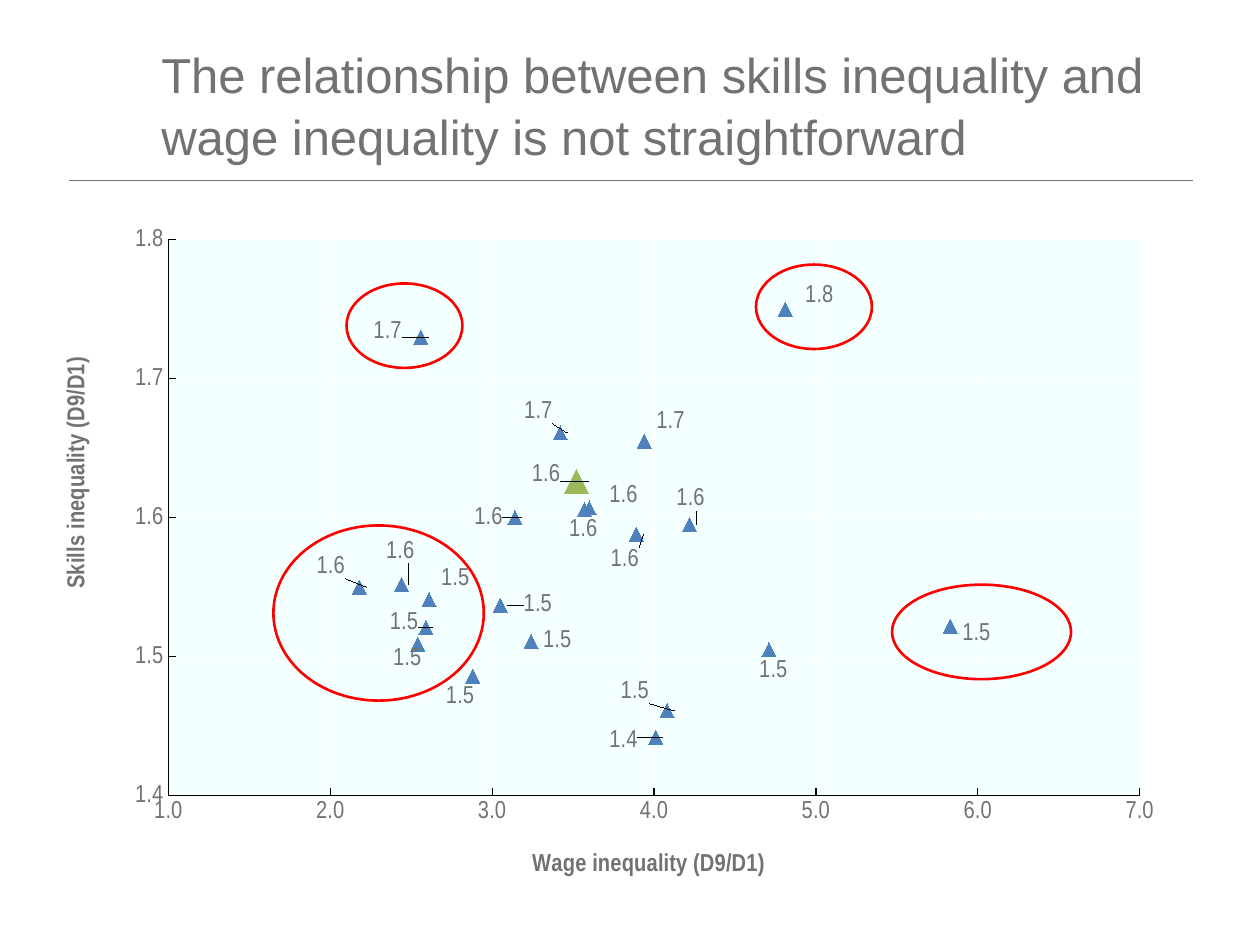
from dataclasses import dataclass

from lxml.etree import SubElement
from pptx import Presentation
from pptx.chart.data import XyChartData
from pptx.dml.color import RGBColor as Rgb
from pptx.enum.chart import XL_CHART_TYPE as ChartType
from pptx.enum.chart import XL_LABEL_POSITION as LabelPosition
from pptx.enum.chart import XL_MARKER_STYLE as MarkerStyle
from pptx.enum.chart import XL_TICK_MARK as TickMark
from pptx.enum.dml import MSO_THEME_COLOR as ThemeColor
from pptx.enum.shapes import MSO_CONNECTOR as Connector
from pptx.enum.shapes import MSO_SHAPE as Shape
from pptx.enum.text import MSO_ANCHOR as Anchor
from pptx.enum.text import MSO_AUTO_SIZE as AutoSize
from pptx.enum.text import PP_ALIGN as Align
from pptx.oxml import parse_xml
from pptx.oxml.ns import nsdecls, qn
from pptx.util import Inches, Pt


@dataclass(frozen=True)
class Theme:
    """Colours, fonts and type sizes of the slide."""
    text: Rgb = Rgb(0x72, 0x72, 0x72)
    axis: Rgb = Rgb(0, 0, 0)
    grid: Rgb = Rgb(0xFF, 0xFF, 0xFF)
    plot: str = "F4FFFF"
    country: Rgb = Rgb(0x4F, 0x81, 0xBD)
    highlight: Rgb = Rgb(0x9B, 0xBB, 0x59)
    ring: Rgb = Rgb(0xFF, 0, 0)
    title_font: str = "Arial"
    chart_font: str = "Arial Narrow"
    title_size: Pt = Pt(28)
    chart_size: Pt = Pt(14)


THEME = Theme()
TITLE = "The relationship between skills inequality and wage inequality is not straightforward"
CHART_BOX = (0.42, 1.67, 9.08, 5.42)
NUMBER_FORMAT = "#,##0.0"
HIGHLIGHTED = 5

# Wage inequality, skills inequality, label shift right and down in inches
COUNTRIES = [
    (3.14, 1.600, -0.42, 0), (3.05, 1.537, 0.09, 0),
    (3.94, 1.655, 0, -0.15), (2.88, 1.486, -0.31, 0.17),
    (2.59, 1.521, -0.38, -0.04), (3.52, 1.626, -0.49, -0.05),
    (4.71, 1.505, -0.17, 0.17), (2.54, 1.509, -0.29, 0.12),
    (2.61, 1.541, 0, -0.16), (2.56, 1.730, -0.47, -0.04),
    (4.22, 1.595, -0.2, -0.2), (3.57, 1.606, -0.22, 0.17),
    (3.42, 1.661, -0.38, -0.17), (4.08, 1.461, -0.46, -0.15),
    (5.83, 1.522, 0, 0.06), (3.24, 1.511, 0, 0),
    (2.44, 1.552, -0.22, -0.26), (3.89, 1.588, -0.3, 0.2),
    (4.01, 1.442, -0.46, 0.03), (3.60, 1.607, 0.06, -0.1),
    (2.18, 1.550, -0.44, -0.16), (4.81, 1.750, 0.06, -0.11),
]
RINGS = [(6, 2.1, 0.92, 0.67), (2.17, 4.17, 1.67, 1.39),
         (2.75, 2.25, 0.92, 0.67), (7.08, 4.64, 1.42, 0.75)]


def manual_layout(**settings):
    """Return a chart layout element holding the given settings."""
    layout = parse_xml(f"<c:layout {nsdecls('c')}><c:manualLayout/></c:layout>")
    for tag, value in settings.items():
        SubElement(layout[0], qn(f"c:{tag}")).set("val", str(value))
    return layout


def drop_layout(parent):
    """Remove the automatic layout of a chart part."""
    for layout in parent.findall(qn("c:layout")):
        parent.remove(layout)


def set_font(font, name, size, bold=False):
    """Apply a typeface, size and weight in the text colour."""
    font.name, font.size, font.bold = name, size, bold
    font.color.rgb = THEME.text


def add_title(slide):
    """Place and format the slide title."""
    title = slide.shapes.title
    title.left, title.top, title.width, title.height = map(Inches, (1.18, 0.26, 8.65, 1.12))
    frame = title.text_frame
    frame.text = TITLE
    frame.auto_size, frame.word_wrap = AutoSize.NONE, True
    frame.vertical_anchor = Anchor.MIDDLE
    paragraph = frame.paragraphs[0]
    paragraph.alignment, paragraph.line_spacing = Align.LEFT, 1.05
    set_font(paragraph.runs[0].font, THEME.title_font, THEME.title_size)


def add_rule(slide):
    """Draw the thin line below the title."""
    ends = map(Inches, (0.55, 1.43, 9.47, 1.43))
    rule = slide.shapes.add_connector(Connector.STRAIGHT, *ends)
    rule.line.color.rgb, rule.line.width = THEME.text, Pt(0.5)
    SubElement(rule._element.spPr, qn("a:effectLst"))


def add_ring(slide, box):
    """Draw an outlined ellipse around a group of countries."""
    ring = slide.shapes.add_shape(Shape.OVAL, *map(Inches, box))
    ring.shadow.inherit = False
    ring.fill.background()
    ring.line.color.rgb, ring.line.width = THEME.ring, Pt(1.5)


def format_axis(axis, title, limits, step, title_x, title_y):
    """Scale an axis, style its lines and place its title."""
    axis.minimum_scale, axis.maximum_scale = limits
    axis.major_unit = step
    axis.major_tick_mark, axis.minor_tick_mark = TickMark.INSIDE, TickMark.NONE
    axis.tick_labels.number_format = NUMBER_FORMAT
    axis.tick_labels.number_format_is_linked = False
    axis.has_major_gridlines = True
    for line, color in ((axis.format.line, THEME.axis),
                        (axis.major_gridlines.format.line, THEME.grid)):
        line.color.rgb, line.width = color, Pt(0.75)
    frame = axis.axis_title.text_frame
    frame.text = title
    set_font(frame.paragraphs[0].runs[0].font, THEME.chart_font, THEME.chart_size, True)
    holder = axis.axis_title._element
    drop_layout(holder)
    holder.find(qn("c:tx")).addnext(
        manual_layout(xMode="edge", yMode="edge", x=title_x, y=title_y))


def format_marker(marker, color, size):
    """Make a marker a plain triangle."""
    marker.style, marker.size = MarkerStyle.TRIANGLE, size
    marker.format.fill.solid()
    marker.format.fill.fore_color.rgb = color
    marker.format.line.color.rgb = color


def place_label(point, right, down):
    """Show the value of a point, shifted from its right side."""
    label = point.data_label
    set_font(label.font, THEME.chart_font, THEME.chart_size)
    label.position = LabelPosition.RIGHT
    element = label._get_or_add_dLbl()
    shift = manual_layout(x=round(right / CHART_BOX[2], 3), y=round(down / CHART_BOX[3], 3))
    element.insert(1, shift)
    shift.addnext(parse_xml(
        f'<c:numFmt {nsdecls("c")} formatCode="{NUMBER_FORMAT}" sourceLinked="0"/>'))


def format_plot_area(chart):
    """Fix the inner plot area and fill it."""
    area = chart._chartSpace.chart.plotArea
    drop_layout(area)
    area.insert(0, manual_layout(layoutTarget="inner", xMode="edge", yMode="edge",
                                 x=0.101, y=0.043, w=0.849, h=0.814))
    area.append(parse_xml(
        f'<c:spPr {nsdecls("c", "a")}><a:solidFill><a:srgbClr val="{THEME.plot}"/>'
        "</a:solidFill></c:spPr>"))


def add_inequality_chart(slide):
    """Add the scatter of skills inequality against wage inequality."""
    data = XyChartData(number_format=NUMBER_FORMAT)
    countries = data.add_series("Series 1")
    for wage, skills, _, _ in COUNTRIES:
        countries.add_data_point(wage, skills)
    chart = slide.shapes.add_chart(ChartType.XY_SCATTER, *map(Inches, CHART_BOX), data).chart
    chart.has_legend = chart.has_title = False
    set_font(chart.font, THEME.chart_font, THEME.chart_size)
    format_axis(chart.category_axis, "Wage inequality (D9/D1)", (1, 7), 1, 0.415, 0.93)
    format_axis(chart.value_axis, "Skills inequality (D9/D1)", (1.4, 1.8), 0.1, 0.005, 0.208)
    plot = chart.plots[0]
    plot.vary_by_categories = False
    series = plot.series[0]
    series.format.line.fill.background()
    format_marker(series.marker, THEME.country, 8)
    for index, (_, _, right, down) in enumerate(COUNTRIES):
        place_label(series.points[index], right, down)
    format_marker(series.points[HIGHLIGHTED].marker, THEME.highlight, 14)
    format_plot_area(chart)


def main():
    """Build the slide and save it."""
    deck = Presentation()
    deck.slide_width, deck.slide_height = Inches(10), Inches(7.5)
    slide = deck.slides.add_slide(deck.slide_layouts[5])
    slide.background.fill.solid()
    slide.background.fill.fore_color.theme_color = ThemeColor.BACKGROUND_1
    add_rule(slide)
    add_title(slide)
    add_inequality_chart(slide)
    for box in RINGS:
        add_ring(slide, box)
    deck.save("out.pptx")


if __name__ == "__main__":
    main()
